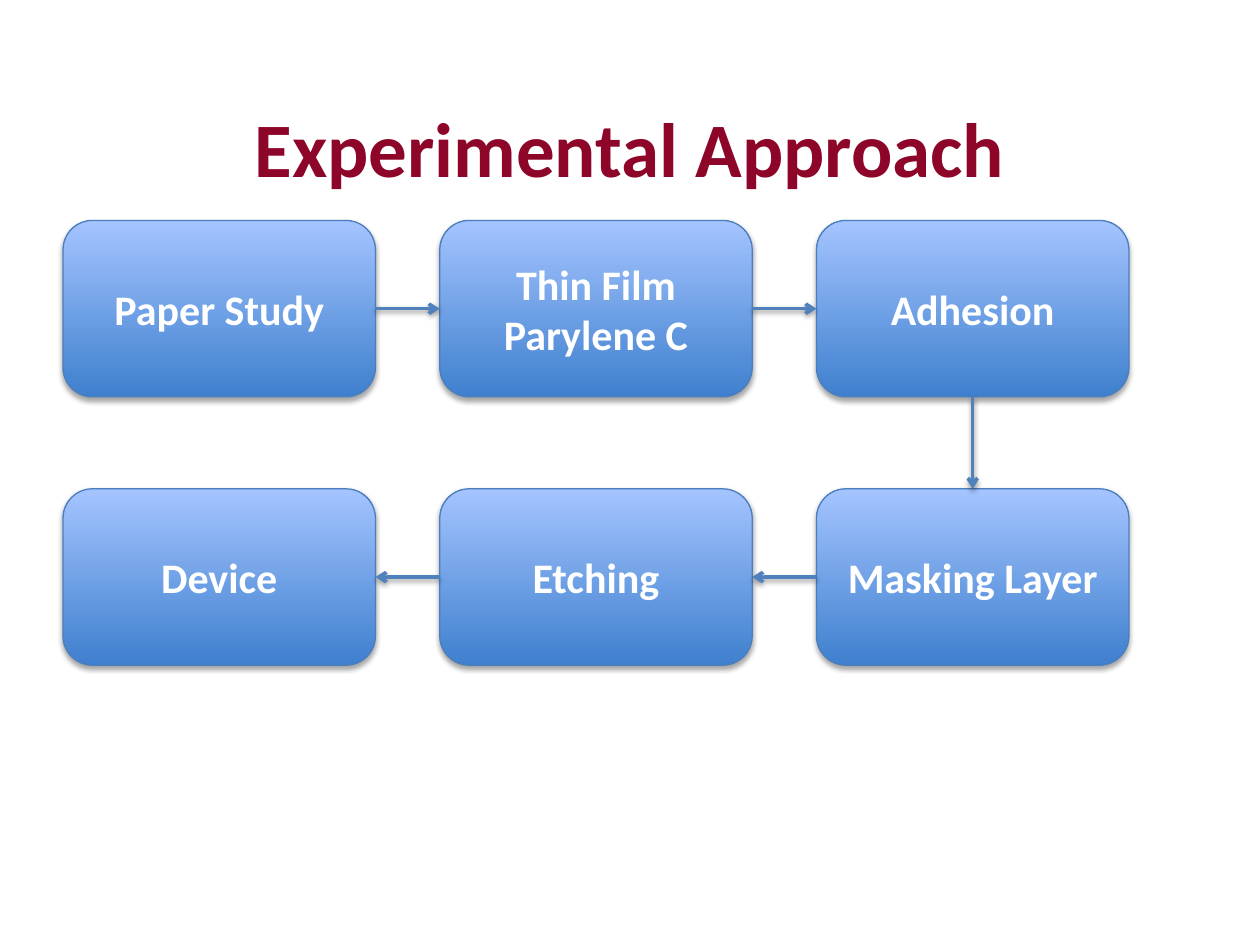
from dataclasses import dataclass

from lxml import etree
from pptx import Presentation
from pptx.dml.color import RGBColor
from pptx.enum.shapes import MSO_CONNECTOR, MSO_SHAPE
from pptx.enum.text import MSO_ANCHOR, PP_ALIGN
from pptx.oxml.ns import qn
from pptx.util import Inches, Pt

ROUNDED = MSO_SHAPE.ROUNDED_RECTANGLE
STRAIGHT = MSO_CONNECTOR.STRAIGHT
CENTER = PP_ALIGN.CENTER
MIDDLE = MSO_ANCHOR.MIDDLE
TOP, LEFT, BOTTOM, RIGHT = range(4)
TITLE_ONLY = 5


@dataclass(frozen=True)
class Theme:
    font: str = "Calibri"
    title_color: str = "8D0528"
    step_text: str = "FFFFFF"
    step_bottom: str = "3F80CE"
    step_top: str = "A4C4FF"
    step_line: str = "4B7EBC"
    arrow: str = "4F81BD"
    shadow: str = "000000"
    title_size: float = 44
    step_size: float = 24


THEME = Theme()


def rgb(value):
    return RGBColor.from_string(value)


def write_centered(frame, text, size, color):
    frame.word_wrap = True
    frame.vertical_anchor = MIDDLE
    paragraph = frame.paragraphs[0]
    paragraph.alignment = CENTER
    run = paragraph.add_run()
    run.text = text
    run.font.name = THEME.font
    run.font.size = Pt(size)
    run.font.bold = True
    run.font.color.rgb = rgb(color)


def add_soft_shadow(part, distance, opacity):
    """Cast a blurred shadow straight down; call after the line is set."""
    effects = etree.SubElement(part._element.spPr, qn("a:effectLst"))
    shadow = etree.SubElement(
        effects, qn("a:outerShdw"), blurRad=str(Pt(3.1)),
        dist=str(Pt(distance)), dir="5400000", rotWithShape="0")
    color = etree.SubElement(shadow, qn("a:srgbClr"), val=THEME.shadow)
    etree.SubElement(color, qn("a:alpha"), val=str(opacity * 1000))


def place_title(slide, text, left, top, width, height):
    title = slide.shapes.title
    title.left, title.top = left, top
    title.width, title.height = width, height
    write_centered(title.text_frame, text, THEME.title_size, THEME.title_color)


def add_step(slide, label, left, top, width, height):
    step = slide.shapes.add_shape(ROUNDED, left, top, width, height)
    step.fill.gradient()
    step.fill.gradient_angle = 90
    for stop, color in zip(step.fill.gradient_stops,
                           (THEME.step_bottom, THEME.step_top)):
        stop.color.rgb = rgb(color)
    step.line.color.rgb = rgb(THEME.step_line)
    step.line.width = Pt(0.75)
    add_soft_shadow(step, distance=1.8, opacity=35)
    write_centered(step.text_frame, label, THEME.step_size, THEME.step_text)
    return step


def add_arrow(slide, source, source_side, target, target_side):
    arrow = slide.shapes.add_connector(STRAIGHT, 0, 0, 0, 0)
    arrow.begin_connect(source, source_side)
    arrow.end_connect(target, target_side)
    arrow.line.color.rgb = rgb(THEME.arrow)
    arrow.line.width = Pt(2)
    etree.SubElement(arrow.line._get_or_add_ln(), qn("a:tailEnd"), type="arrow")
    add_soft_shadow(arrow, distance=1.6, opacity=38)


def add_process(slide, outward, back, left, top, width, height):
    """Run one row of steps to the right, then a second row back to the left."""
    step_width, step_height = Inches(2.48), Inches(1.4)
    pitch = (width - step_width) // (len(outward) - 1)
    places = [(label, column, top) for column, label in enumerate(outward)]
    last = len(outward) - 1
    places += [(label, last - i, top + height - step_height)
               for i, label in enumerate(back)]
    steps = [add_step(slide, label, left + column * pitch, row_top,
                      step_width, step_height)
             for label, column, row_top in places]

    turn = len(outward) - 1
    for i, (source, target) in enumerate(zip(steps, steps[1:])):
        if i < turn:
            sides = RIGHT, LEFT
        elif i == turn:
            sides = BOTTOM, TOP
        else:
            sides = LEFT, RIGHT
        add_arrow(slide, source, sides[0], target, sides[1])


def main():
    deck = Presentation()
    deck.slide_width, deck.slide_height = Inches(10), Inches(7.5)
    slide = deck.slides.add_slide(deck.slide_layouts[TITLE_ONLY])
    place_title(slide, "Experimental Approach",
                Inches(0.5), Inches(0.54), Inches(9), Inches(1.25))
    add_process(slide,
                ["Paper Study", "Thin Film Parylene C", "Adhesion"],
                ["Masking Layer", "Etching", "Device"],
                Inches(0.5), Inches(1.75), Inches(8.46), Inches(3.53))
    deck.save("out.pptx")


if __name__ == "__main__":
    main()
